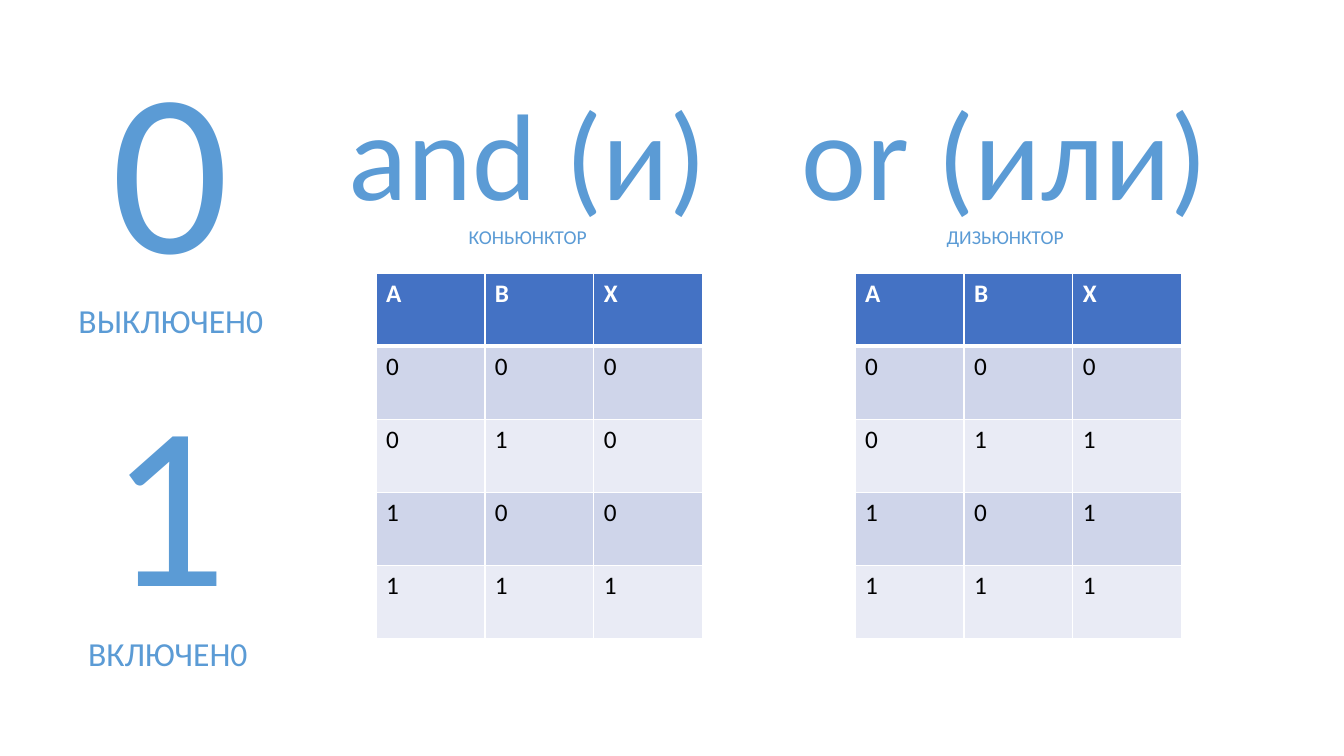
from dataclasses import dataclass

from lxml.etree import SubElement
from pptx import Presentation
from pptx.dml.color import RGBColor as Rgb
from pptx.enum.text import MSO_AUTO_SIZE as AutoSize, PP_ALIGN as Align
from pptx.oxml.ns import qn
from pptx.util import Inches, Pt


@dataclass(frozen=True)
class Theme:
    font: str = "Calibri"
    accent: str = "5B9BD5"
    header_fill: str = "4472C4"
    band_fills: tuple = ("CFD5EA", "E9EBF5")
    header_text: str = "FFFFFF"
    body_text: str = "000000"
    border: str = "FFFFFF"
    thin: float = 1
    thick: float = 3
    digit: int = 166
    operator: int = 88
    state: int = 24
    element: int = 14
    cell: int = 18


class LogicSlide:
    """Places elements by percent of the slide's width and height."""

    def __init__(self, deck, theme):
        self.deck = deck
        self.theme = theme
        self.page = deck.slides.add_slide(deck.slide_layouts[6])

    def area(self, left, top, width, height):
        across, down = self.deck.slide_width / 100, self.deck.slide_height / 100
        return [round(length) for length in
                (left * across, top * down, width * across, height * down)]

    def style(self, para, size, color, bold=False):
        font = para.font
        font.name, font.size, font.bold = self.theme.font, Pt(size), bold
        font.color.rgb = Rgb.from_string(color)

    def caption(self, area, lines):
        """Adds a centred text box from (text, size) lines."""
        frame = self.page.shapes.add_textbox(*self.area(*area)).text_frame
        frame.word_wrap = True
        frame.auto_size = AutoSize.SHAPE_TO_FIT_TEXT
        frame.text = "\n".join(text for text, size in lines)
        for para, (text, size) in zip(frame.paragraphs, lines):
            para.alignment = Align.CENTER
            self.style(para, size, self.theme.accent)

    def truth_table(self, area, rows):
        left, top, width, height = self.area(*area)
        table = self.page.shapes.add_table(
            len(rows), len(rows[0]), left, top, width, height).table
        for row_index, values in enumerate(rows):
            for column_index, value in enumerate(values):
                self.fill_cell(table.cell(row_index, column_index), value, row_index)

    def fill_cell(self, cell, value, row_index):
        theme = self.theme
        is_header = row_index == 0
        self.outline(cell, top=theme.thick if row_index == 1 else theme.thin,
                     bottom=theme.thick if is_header else theme.thin)
        fill = theme.header_fill if is_header else theme.band_fills[(row_index - 1) % 2]
        cell.fill.solid()
        cell.fill.fore_color.rgb = Rgb.from_string(fill)
        cell.text = value
        self.style(cell.text_frame.paragraphs[0], theme.cell,
                   theme.header_text if is_header else theme.body_text, is_header)

    def outline(self, cell, top, bottom):
        properties = cell._tc.get_or_add_tcPr()
        thin = self.theme.thin
        for side, width in (("L", thin), ("R", thin), ("T", top), ("B", bottom)):
            line = SubElement(properties, qn(f"a:ln{side}"), w=str(Pt(width)))
            fill = SubElement(line, qn("a:solidFill"))
            SubElement(fill, qn("a:srgbClr"), val=self.theme.border)


def main():
    deck = Presentation()
    deck.slide_width, deck.slide_height = Inches(13.33), Inches(7.5)
    theme = Theme()
    slide = LogicSlide(deck, theme)

    states = (
        ("0", "ВЫКЛЮЧЕН0", (4.05, 2.13, 17.33, 44)),
        ("1", "ВКЛЮЧЕН0", (5.18, 46.13, 14.63, 44)),
    )
    for digit, name, area in states:
        slide.caption(area, ((digit, theme.digit), (name, theme.state)))

    operators = (
        ("and (и)", "КОНЬЮНКТОР", (24.08, 9.6, 30.38, 24.27), 27.98, min),
        ("or (или)", "ДИЗЬЮНКТОР", (55.51, 9.6, 38.56, 24.27), 63.62, max),
    )
    for operator, element, area, table_left, combine in operators:
        slide.caption(area, ((operator, theme.operator), (element, theme.element)))
        rows = ["ABX"] + [a + b + combine(a, b) for a in "01" for b in "01"]
        slide.truth_table((table_left, 36.13, 24.3, 48.4), rows)

    deck.save("out.pptx")


if __name__ == "__main__":
    main()
